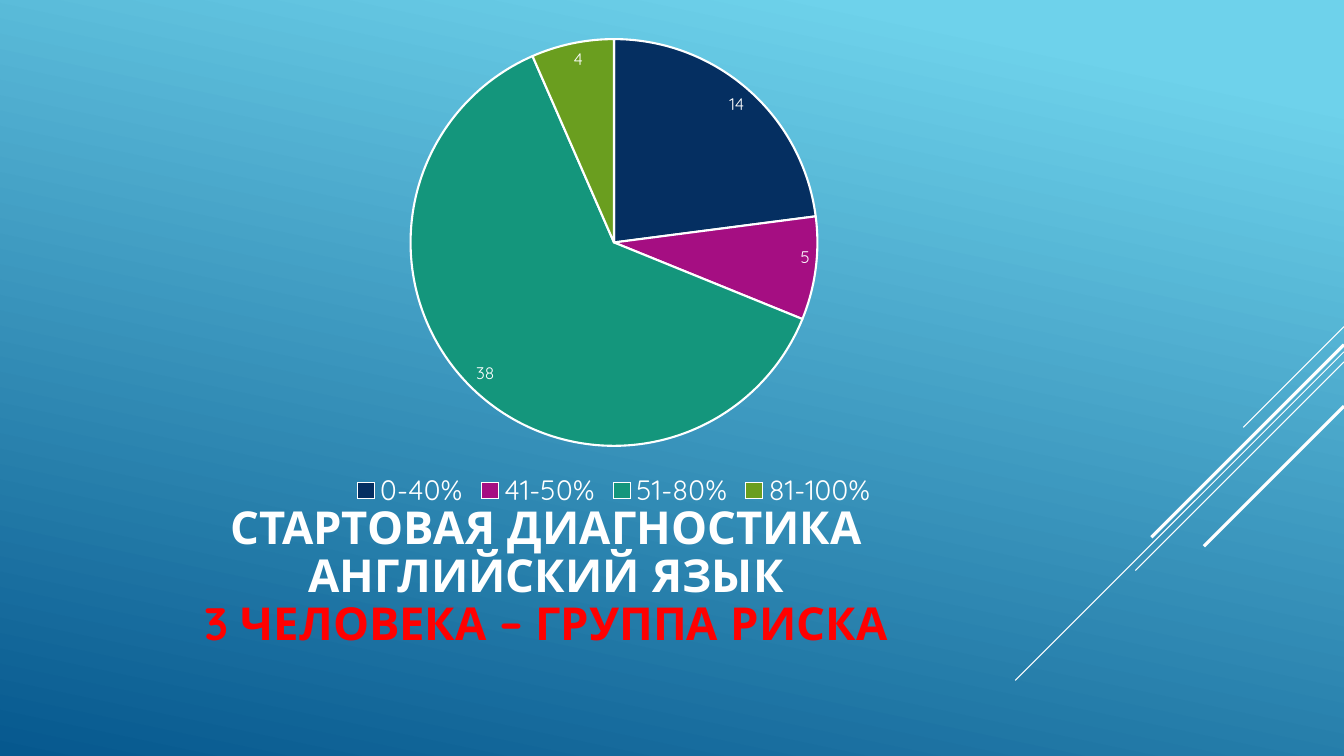
from dataclasses import dataclass

from lxml.etree import SubElement
from pptx import Presentation
from pptx.chart.data import CategoryChartData
from pptx.dml.color import RGBColor
from pptx.enum.chart import XL_CHART_TYPE as ChartType
from pptx.enum.chart import XL_LABEL_POSITION as LabelPosition
from pptx.enum.chart import XL_LEGEND_POSITION as LegendPosition
from pptx.enum.shapes import MSO_CONNECTOR as Connector
from pptx.enum.text import MSO_ANCHOR as Anchor
from pptx.enum.text import PP_ALIGN as Align
from pptx.oxml.ns import qn
from pptx.util import Inches, Pt


@dataclass(frozen=True)
class Theme:
    font: str = "Quicksand"
    white: str = "FFFFFF"
    risk: str = "FF0000"
    sky: str = "6ED2EB"
    deep: str = "06588E"
    slices: tuple = ("052F61", "A50E82", "14967C", "6A9E1F")
    title_size: float = 32.4
    legend_size: float = 20
    label_size: float = 12
    chart_size: float = 10


THEME = Theme()
WIDTH, HEIGHT = 13.33, 7.5


def rgb(color):
    return RGBColor.from_string(color)


def style_font(font, size, color=THEME.white, bold=False):
    font.name = THEME.font
    font.size = Pt(size)
    font.bold = bold
    font.color.rgb = rgb(color)


def add_text(paragraph, text, **style):
    run = paragraph.add_run()
    run.text = text
    style_font(run.font, **style)


def paint_background(slide):
    fill = slide.background.fill
    fill.gradient()
    fill.gradient_angle = 360 - 102
    stops = zip(fill.gradient_stops, (0.1, 1), (THEME.sky, THEME.deep))
    for stop, position, color in stops:
        stop.position = position
        stop.color.rgb = rgb(color)


def draw_diagonals(slide, right):
    rays = ((3.24, 1, 0.75), (3.49, 3.26, 0.75), (3.59, 2.07, 0.75),
            (3.42, 1.91, 2.25), (4.03, 1.39, 2.25))
    for top, run, weight in rays:
        ray = slide.shapes.add_connector(
            Connector.STRAIGHT, Inches(right), Inches(top),
            Inches(right - run), Inches(top + run))
        ray.line.color.rgb = rgb(THEME.white)
        ray.line.width = Pt(weight)
        SubElement(ray._element.spPr, qn("a:effectLst"))


def write_title(slide, left, top, width, height):
    title = slide.shapes.add_textbox(
        Inches(left), Inches(top), Inches(width), Inches(height))
    frame = title.text_frame
    frame.word_wrap = True
    frame.vertical_anchor = Anchor.MIDDLE
    paragraph = frame.paragraphs[0]
    paragraph.alignment = Align.CENTER
    paragraph.line_spacing = 0.88
    for heading in ("СТАРТОВАЯ ДИАГНОСТИКА", "АНГЛИЙСКИЙ ЯЗЫК"):
        add_text(paragraph, heading, size=THEME.title_size, bold=True)
        paragraph.add_line_break()
    add_text(paragraph, "3 ЧЕЛОВЕКА – ГРУППА РИСКА",
             size=THEME.title_size, color=THEME.risk, bold=True)


def draw_results(slide, left, top, width, height):
    results = CategoryChartData()
    results.categories = ["0-40%", "41-50%", "51-80%", "81-100%"]
    results.add_series("Series 1", (14, 5, 38, 4))
    chart = slide.shapes.add_chart(
        ChartType.PIE, Inches(left), Inches(top),
        Inches(width), Inches(height), results).chart
    style_font(chart.font, THEME.chart_size)
    chart.has_title = False
    chart.has_legend = True
    chart.legend.position = LegendPosition.BOTTOM
    chart.legend.include_in_layout = False
    style_font(chart.legend.font, THEME.legend_size)

    pie = chart.plots[0]
    pie.vary_by_categories = True
    scores = pie.series[0]
    for index, color in enumerate(THEME.slices):
        band = scores.points[index].format
        band.fill.solid()
        band.fill.fore_color.rgb = rgb(color)
        band.line.color.rgb = rgb(THEME.white)
        band.line.width = Pt(1.5)
    labels = scores.data_labels
    labels.show_value = True
    labels.show_percentage = False
    labels.position = LabelPosition.INSIDE_END
    style_font(labels.font, THEME.label_size)


def main():
    deck = Presentation()
    deck.slide_width, deck.slide_height = Inches(WIDTH), Inches(HEIGHT)
    slide = deck.slides.add_slide(deck.slide_layouts[6])
    paint_background(slide)
    draw_diagonals(slide, WIDTH)
    write_title(slide, 0.75, 4.91, 9.33, 1.65)
    draw_results(slide, 0.75, 0.25, 10.68, 4.85)
    deck.save("out.pptx")


if __name__ == "__main__":
    main()
